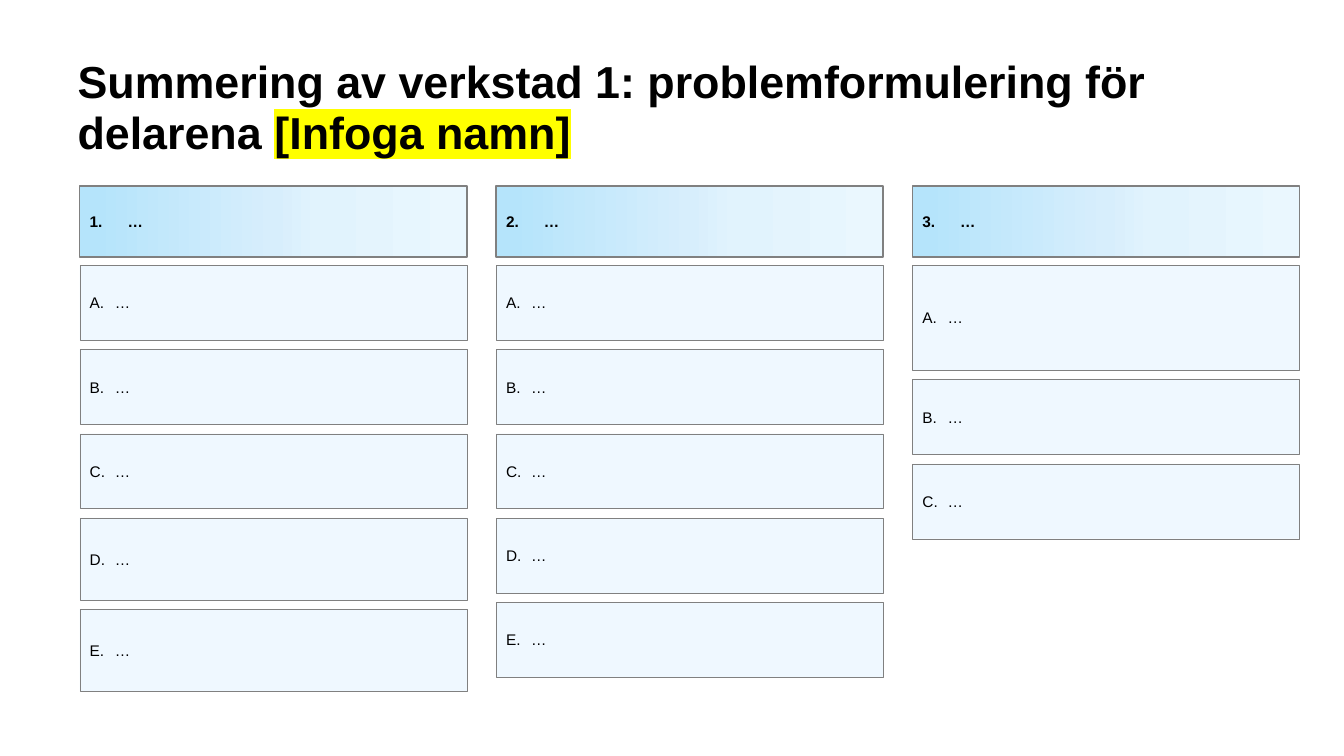
from lxml.etree import SubElement
from pptx import Presentation
from pptx.dml.color import RGBColor
from pptx.enum.shapes import MSO_SHAPE as Shape
from pptx.enum.text import MSO_ANCHOR as Anchor, PP_ALIGN as Align
from pptx.oxml.ns import qn
from pptx.util import Pt

COLOURS = {
    "text": "000000",
    "highlight": "FFFF00",
    "outline": "808080",
    "answer": "EFF8FF",
}
HEADER_STOPS = {0: "EAF7FE", 38: "E1F3FD", 50: "D7EEFC", 96: "B5E4FB", 100: "B3E3FA"}

COLUMN_LEFT, COLUMN_STEP, COLUMN_WIDTH = 57, 297.4, 276.5
HEADER_TOP, HEADER_HEIGHT = 133, 50.5
ANSWER_TOP, ANSWER_GAP = 189.4, 6.7
ANSWER_HEIGHTS = [
    [53.5, 53.5, 53.5, 58.5, 58.5],
    [53.5] * 5,
    [75, 53.5, 53.5],
]


def rgb(name):
    return RGBColor.from_string(COLOURS[name])


def add_run(paragraph, text, size, bold=False):
    run = paragraph.add_run()
    run.text = text
    for key, value in {"size": Pt(size), "bold": bold, "name": "Arial"}.items():
        setattr(run.font, key, value)
    run.font.color.rgb = rgb("text")
    return run


def highlight(run):
    properties = run.font._element
    marker = SubElement(properties, qn("a:highlight"))
    SubElement(marker, qn("a:srgbClr"), val=COLOURS["highlight"])
    properties.find(qn("a:solidFill")).addnext(marker)


def number(paragraph, scheme, start, indent):
    """Give the paragraph an automatic number with a hanging indent."""
    properties = paragraph._p.get_or_add_pPr()
    properties.set("marL", str(Pt(indent)))
    properties.set("indent", str(-Pt(indent)))
    SubElement(properties, qn("a:buAutoNum"), type=scheme, startAt=str(start))


def fill_gradient(box):
    box.fill.gradient()
    box.fill.gradient_angle = 180
    stops = box._element.spPr.find(qn("a:gradFill")).find(qn("a:gsLst"))
    for stop in list(stops):
        stops.remove(stop)
    for percent, colour in HEADER_STOPS.items():
        stop = SubElement(stops, qn("a:gs"), pos=str(percent * 1000))
        SubElement(stop, qn("a:srgbClr"), val=colour)


def add_box(slide, left, top, height, line_width, scheme, start, indent, bold=False):
    """Add an outlined box that holds one numbered line."""
    box = slide.shapes.add_shape(
        Shape.RECTANGLE, Pt(left), Pt(top), Pt(COLUMN_WIDTH), Pt(height))
    box.shadow.inherit = False
    box.line.color.rgb = rgb("outline")
    box.line.width = Pt(line_width)
    box.text_frame.word_wrap = True
    box.text_frame.vertical_anchor = Anchor.MIDDLE
    entry = box.text_frame.paragraphs[0]
    entry.alignment = Align.LEFT
    number(entry, scheme, start, indent)
    add_run(entry, "…", 11, bold)
    return box


def add_header(slide, left, position):
    header = add_box(slide, left, HEADER_TOP, HEADER_HEIGHT, 1,
                     "arabicPeriod", position, 27, bold=True)
    fill_gradient(header)


def add_answers(slide, left, heights):
    top = ANSWER_TOP
    for position, height in enumerate(heights, 1):
        answer = add_box(slide, left, top, height, 0.25,
                         "alphaUcPeriod", position, 18)
        answer.fill.solid()
        answer.fill.fore_color.rgb = rgb("answer")
        top += height + ANSWER_GAP


def add_title(slide):
    title = slide.shapes.add_textbox(Pt(48.3), Pt(61.2), Pt(871), Pt(56.2))
    title.text_frame.word_wrap = True
    title.text_frame.vertical_anchor = Anchor.BOTTOM
    heading = title.text_frame.paragraphs[0]
    heading.line_spacing = 0.95
    add_run(heading, "Summering av verkstad 1: problemformulering för delarena ",
            32, bold=True)
    highlight(add_run(heading, "[Infoga namn]", 32, bold=True))


def main():
    deck = Presentation()
    deck.slide_width, deck.slide_height = Pt(960), Pt(540)
    slide = deck.slides.add_slide(deck.slide_layouts[6])
    add_title(slide)
    for column, heights in enumerate(ANSWER_HEIGHTS):
        left = COLUMN_LEFT + column * COLUMN_STEP
        add_header(slide, left, column + 1)
        add_answers(slide, left, heights)
    deck.save("out.pptx")


if __name__ == "__main__":
    main()
